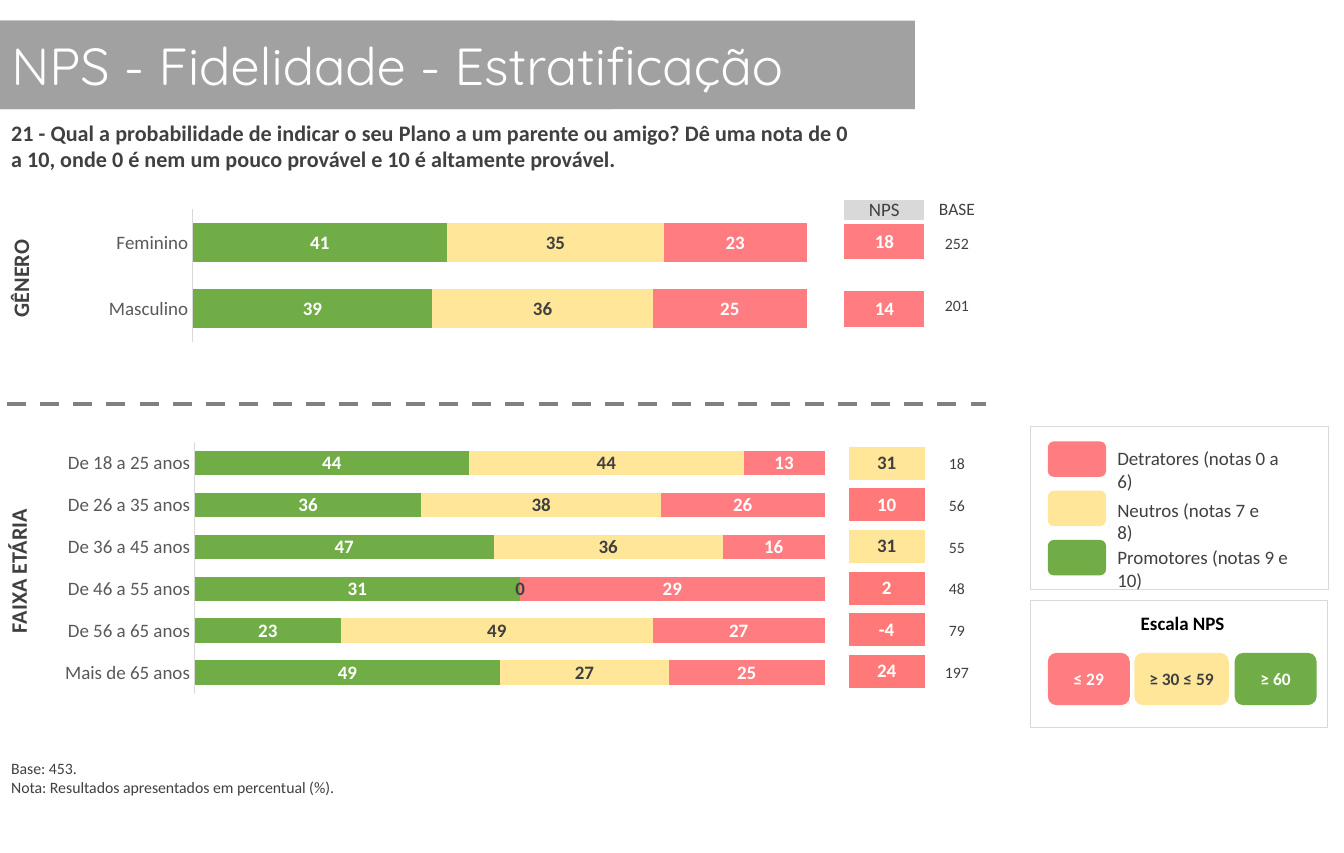
import copy

import pptx
import pptx.chart.data
import pptx.dml.color
import pptx.enum.chart
import pptx.enum.dml
import pptx.enum.shapes
import pptx.enum.text
import pptx.util
from lxml import etree
from pptx.util import Cm, Pt

ALIGN = pptx.enum.text.PP_ALIGN
MIDDLE = pptx.enum.text.MSO_ANCHOR.MIDDLE
KIND = pptx.enum.shapes.MSO_SHAPE
NS = "http://schemas.openxmlformats.org/drawingml/2006/main"
CNS = "http://schemas.openxmlformats.org/drawingml/2006/chart"
RED, CREAM, GREEN = "FF7C80", "FFE699", "70AD47"
DARK, WHITE, PALE = "404040", "FFFFFF", "D9D9D9"


def rgb(code):
    return pptx.dml.color.RGBColor.from_string(code)


def style(font, size, ink=DARK, bold=False, face="Calibri"):
    font.size = Pt(size)
    font.name = face
    font.bold = bold
    font.color.rgb = rgb(ink)


prs = pptx.Presentation()
prs.slide_width, prs.slide_height = Cm(30), Cm(19.05)
slide = prs.slides.add_slide(prs.slide_layouts[5])
shapes = slide.shapes
title = shapes.title

boxes = [
    (KIND.ROUNDED_RECTANGLE, -0.6, 0.46, 14.6, 1.98, "A1A1A1", "", WHITE),
    (KIND.RECTANGLE, 23.01, 9.53, 6.65, 3.63, None, "", DARK),
    (KIND.RECTANGLE, 23.01, 13.41, 6.63, 2.84, None, "", DARK),
    (KIND.ROUNDED_RECTANGLE, 23.39, 14.58, 1.83, 1.17, RED, "≤ 29", WHITE),
    (KIND.ROUNDED_RECTANGLE, 25.32, 14.58, 2.11, 1.17, CREAM, "≥ 30 ≤ 59", DARK),
    (KIND.ROUNDED_RECTANGLE, 27.56, 14.58, 1.83, 1.17, GREEN, "≥ 60", WHITE),
]
for row, color in enumerate((RED, CREAM, GREEN)):
    top = 9.86 + 1.1 * row
    boxes.append((KIND.ROUNDED_RECTANGLE, 23.39, top, 1.3, 0.79, color, "", WHITE))

for kind, left, top, width, height, color, words, ink in boxes:
    box = shapes.add_shape(kind, Cm(left), Cm(top), Cm(width), Cm(height))
    box.shadow.inherit = False
    if color:
        box.fill.solid()
        box.fill.fore_color.rgb = rgb(color)
        box.line.fill.background()
    else:
        box.fill.background()
        box.line.color.rgb = rgb(PALE)
        box.line.width = Pt(0.5)
    if words:
        box.text_frame.text = words
        box.text_frame.vertical_anchor = MIDDLE
        para = box.text_frame.paragraphs[0]
        para.alignment = ALIGN.CENTER
        style(para.font, 11, ink, True)

banner = shapes[1]
title.left, title.top, title.width, title.height = Cm(0), Cm(0.46), Cm(20.42), Cm(1.98)
title.element.spPr.append(copy.deepcopy(banner.element.spPr.prstGeom))
title.fill.solid()
title.fill.fore_color.rgb = rgb("A1A1A1")
title.element.addprevious(banner.element)
title.text_frame.text = "NPS - Fidelidade - Estratificação"
title.text_frame.auto_size = pptx.enum.text.MSO_AUTO_SIZE.NONE
title.text_frame.vertical_anchor = MIDDLE
para = title.text_frame.paragraphs[0]
para.alignment = ALIGN.LEFT
style(para.font, 33, WHITE, face="Quicksand")

texts = [
    (0, 2.54, 19.2, 1.45, "21 - Qual a probabilidade de indicar o seu Plano a um parente ou amigo? "
     "Dê uma nota de 0 a 10, onde 0 é nem um pouco provável e 10 é altamente provável.",
     14, DARK, True, ALIGN.JUSTIFY, 0),
    (23.01, 13.54, 6.78, 0.76, "Escala NPS", 12, "000000", True, ALIGN.CENTER, 0),
    (24.69, 9.86, 4.37, 0.76, "Detratores (notas 0 a 6)", 12, DARK, False, ALIGN.LEFT, 0),
    (24.69, 11, 3.94, 0.76, "Neutros (notas 7 e 8)", 12, DARK, False, ALIGN.LEFT, 0),
    (24.69, 12.07, 4.78, 0.76, "Promotores (notas 9 e 10)", 12, DARK, False, ALIGN.LEFT, 0),
    (0, 16.81, 7.95, 1.12, "Base: 453.\nNota: Resultados apresentados em percentual (%).",
     10, DARK, False, ALIGN.LEFT, 0),
    (-1.65, 5.79, 4.22, 0.86, "GÊNERO", 14, DARK, True, ALIGN.CENTER, 270),
    (-1.7, 12.32, 4.22, 0.86, "FAIXA ETÁRIA", 14, DARK, True, ALIGN.CENTER, 270),
]
for left, top, width, height, words, size, ink, bold, align, turn in texts:
    box = shapes.add_textbox(Cm(left), Cm(top), Cm(width), Cm(height))
    box.rotation = turn
    box.text_frame.word_wrap = True
    box.text_frame.text = words
    for para in box.text_frame.paragraphs:
        para.alignment = align
        style(para.font, size, ink, bold)

rule = shapes.add_connector(pptx.enum.shapes.MSO_CONNECTOR.STRAIGHT, Cm(0.15), Cm(9.02), Cm(22), Cm(9.02))
rule.line.color.rgb = rgb("808080")
rule.line.width = Pt(3)
rule.line.dash_style = pptx.enum.dml.MSO_LINE.DASH
etree.SubElement(rule.element.spPr, f"{{{NS}}}effectLst")

charts = [
    ((1.68, 4.29, 16.71, 3.73), (0.157, 0.104, 0.82, 0.792),
     ["Masculino", "Feminino"], [(39, 41), (36, 35), (25, 23)]),
    ((1.09, 9.42, 17.32, 6.53), (0.188, 0.07, 0.812, 0.86),
     ["Mais de 65 anos", "De 56 a 65 anos", "De 46 a 55 anos",
      "De 36 a 45 anos", "De 26 a 35 anos", "De 18 a 25 anos"],
     [(49, 23, 31, 47, 36, 44), (27, 49, 0, 36, 38, 44), (25, 27, 29, 16, 26, 13)]),
]
for place, area, cats, rows in charts:
    data = pptx.chart.data.CategoryChartData(number_format="0")
    data.categories = cats
    for name, vals in zip(("Promotores", "Neutros", "Detratores"), rows):
        data.add_series(name, vals)
    kind = pptx.enum.chart.XL_CHART_TYPE.BAR_STACKED_100
    chart = shapes.add_chart(kind, *map(Cm, place), data).chart
    chart.has_legend = False
    chart.has_title = False
    style(chart.font, 10, "000000")
    chart.value_axis.visible = False
    chart.value_axis.has_major_gridlines = False
    axis = chart.category_axis
    axis.major_tick_mark = pptx.enum.chart.XL_TICK_MARK.NONE
    axis.format.line.color.rgb = rgb(PALE)
    axis.format.line.width = Pt(0.75)
    style(axis.tick_labels.font, 12, "595959")
    plot = chart.plots[0]
    plot.gap_width, plot.overlap = 70, 100
    plot.vary_by_categories = False
    for series, color, ink in zip(plot.series, (GREEN, CREAM, RED), (WHITE, DARK, WHITE)):
        series.format.fill.solid()
        series.format.fill.fore_color.rgb = rgb(color)
        labels = series.data_labels
        labels.show_value = True
        labels.number_format = "0"
        labels.number_format_is_linked = False
        labels.position = pptx.enum.chart.XL_LABEL_POSITION.CENTER
        style(labels.font, 12, ink, True)
    field = chart.element.find(f".//{{{CNS}}}plotArea")
    for old in field.findall(f"{{{CNS}}}layout"):
        field.remove(old)
    layout = etree.Element(f"{{{CNS}}}layout")
    field.insert(0, layout)
    manual = etree.SubElement(layout, f"{{{CNS}}}manualLayout")
    marks = [("layoutTarget", "inner"), ("xMode", "edge"), ("yMode", "edge")]
    for tag, val in marks + list(zip("xywh", area)):
        etree.SubElement(manual, f"{{{CNS}}}{tag}").set("val", str(val))

ages = [0.93] * 6
tables = [
    (18.8, 4.42, [0.53, 0.89, 0.61, 0.89], ["NPS", "18", "", "14"], 3, RED),
    (18.85, 9.88, ages, ["31", "10", "31", "2", "-4", "24"], 6, "FF7979"),
    (20.42, 4.42, [0.53, 0.99, 0.41, 0.99], ["BASE", "252", "", "201"], 0, None),
    (20.42, 9.91, ages, ["18", "56", "55", "48", "79", "197"], 0, None),
]
for left, top, heights, items, border, low in tables:
    frame = shapes.add_table(len(items), 1, Cm(left), Cm(top), Cm(1.88), Cm(sum(heights)))
    table = frame.table
    table.first_row = table.horz_banding = False
    for row, height, words in zip(table.rows, heights, items):
        row.height = Cm(height)
        cell = row.cells[0]
        cell.margin_left = cell.margin_right = cell.margin_top = cell.margin_bottom = 0
        cell.vertical_anchor = MIDDLE
        cell.text = words
        para = cell.text_frame.paragraphs[0]
        para.alignment = ALIGN.CENTER
        color, ink, bold, size = None, DARK, False, 10
        if words in ("NPS", "BASE"):
            size = 12 if low else 11
            color = PALE if low else None
        elif words and low:
            size, bold = 12, True
            color, ink = (low, WHITE) if int(words) < 30 else (CREAM, DARK)
        style(para.font, size, ink, bold)
        if not words:
            etree.SubElement(para._p, f"{{{NS}}}endParaRPr").set("sz", "600")
        if color:
            cell.fill.solid()
            cell.fill.fore_color.rgb = rgb(color)
        else:
            cell.fill.background()
        props = cell._tc.get_or_add_tcPr()
        for spot, side in enumerate("LRTB"):
            edge = etree.Element(f"{{{NS}}}ln{side}", w=str(Pt(border)))
            if border:
                paint = etree.SubElement(edge, f"{{{NS}}}solidFill")
                etree.SubElement(paint, f"{{{NS}}}srgbClr").set("val", WHITE)
            else:
                etree.SubElement(edge, f"{{{NS}}}noFill")
            props.insert(spot, edge)

prs.save("out.pptx")
